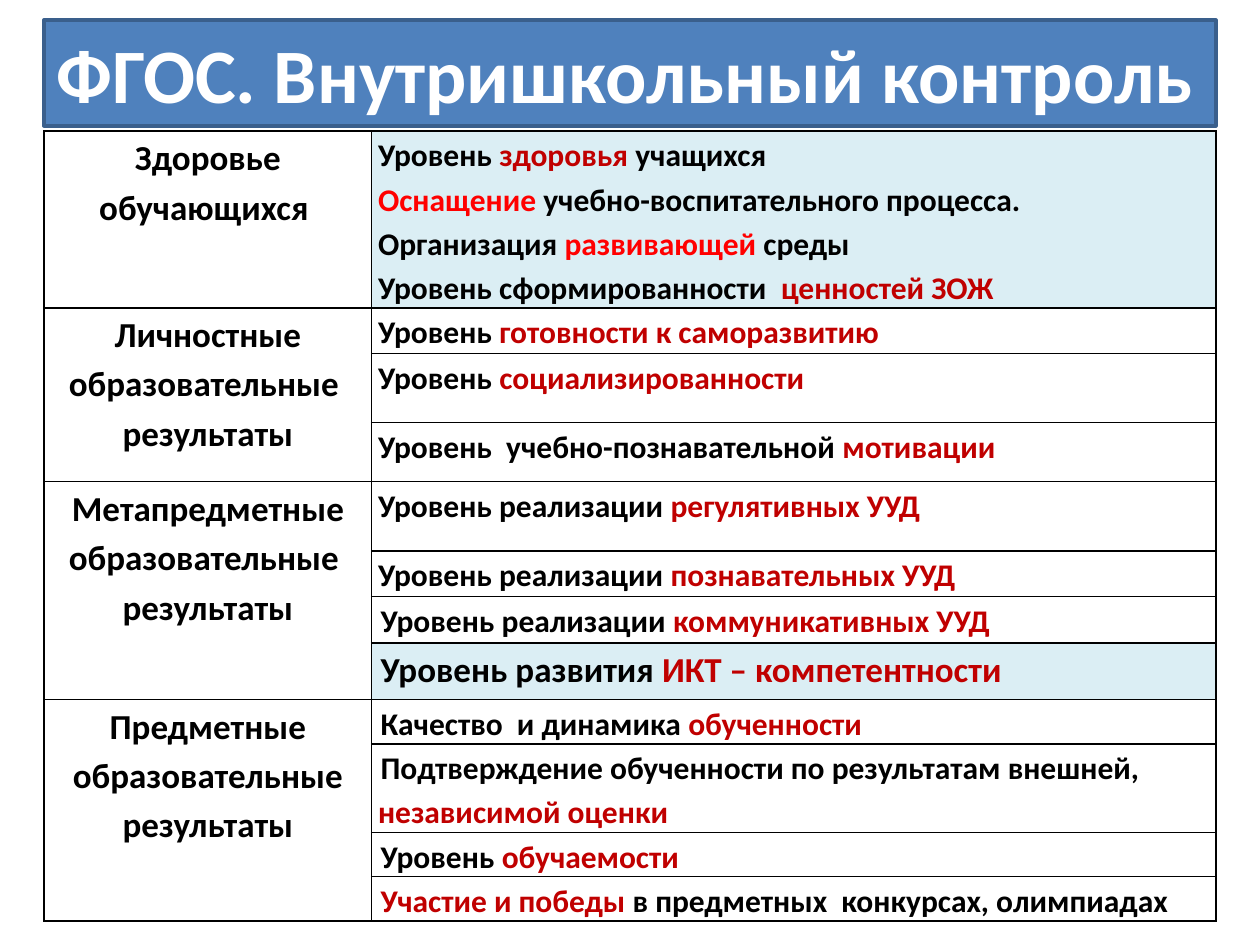
from lxml import etree
from pptx import Presentation
from pptx.dml.color import RGBColor
from pptx.enum.shapes import MSO_SHAPE
from pptx.enum.text import MSO_ANCHOR, MSO_AUTO_SIZE, PP_ALIGN
from pptx.oxml.ns import qn
from pptx.util import Inches, Pt

LEFT, CENTER = PP_ALIGN.LEFT, PP_ALIGN.CENTER
TOP, MIDDLE = MSO_ANCHOR.TOP, MSO_ANCHOR.MIDDLE
RECTANGLE = MSO_SHAPE.RECTANGLE
FIT_SHAPE = MSO_AUTO_SIZE.SHAPE_TO_FIT_TEXT

FONT = "Calibri"
BLACK, WHITE = "000000", "FFFFFF"
DARK_RED, RED = "C00000", "FF0000"
BLUE, BLUE_EDGE, PALE_BLUE = "4F81BD", "3A5F8C", "DBEEF4"

MARGIN, TABLE_TOP = 0.35, 1.04
COLUMN_WIDTHS = (2.6, 6.7)
TABLE_WIDTH = sum(COLUMN_WIDTHS)


def plain(text):
    return text, BLACK


def key(text, color=DARK_RED):
    return text, color


def criterion(height, *lines, **style):
    return height, lines, style


# Each result area with its criteria: row height, lines of runs, style
INDENTED = {"indent": 0.02}
AREAS = [
    (["Здоровье обучающихся "], [
        criterion(1.38,
                  [plain("Уровень "), key("здоровья "), plain("учащихся")],
                  [key("Оснащение", RED), plain(" учебно-воспитательного процесса.")],
                  [plain("Организация "), key("развивающей", RED), plain(" среды")],
                  [plain("Уровень сформированности  "), key("ценностей ЗОЖ")],
                  fill=PALE_BLUE),
    ]),
    (["Личностные образовательные ", "результаты"], [
        criterion(0.36, [plain("Уровень "), key("готовности к саморазвитию")]),
        criterion(0.55, [plain("Уровень "), key("социализированности")]),
        criterion(0.47, [plain("Уровень  учебно-познавательной "), key("мотивации")]),
    ]),
    (["Метапредметные образовательные ", "результаты"], [
        criterion(0.55, [plain("Уровень реализации "), key("регулятивных УУД")]),
        criterion(0.36, [plain("Уровень реализации "), key("познавательных УУД")]),
        criterion(0.37, [plain("Уровень реализации "), key("коммуникативных УУД")],
                  **INDENTED),
        criterion(0.45, [plain("Уровень развития "), key("ИКТ – компетентности")],
                  fill=PALE_BLUE, size=20, **INDENTED),
    ]),
    (["Предметные образовательные результаты"], [
        criterion(0.34, [plain("Качество  и динамика "), key("обученности")],
                  **INDENTED),
        criterion(0.69, [plain("Подтверждение обученности по результатам внешней, "),
                         key("независимой оценки")], **INDENTED),
        criterion(0.34, [plain("Уровень "), key("обучаемости")], **INDENTED),
        criterion(0.34, [key("Участие и победы "),
                         plain("в предметных  конкурсах, олимпиадах")], **INDENTED),
    ]),
]


def rgb(value):
    return RGBColor.from_string(value)


def write_text(frame, lines, size=18, align=LEFT, spacing=None, indent=0):
    """Fill a text frame with paragraphs, each a list of (text, colour) runs."""
    for index, runs in enumerate(lines):
        paragraph = frame.add_paragraph() if index else frame.paragraphs[0]
        paragraph.alignment = align
        if spacing:
            paragraph.line_spacing = spacing
        if indent:
            properties = paragraph._p.get_or_add_pPr()
            properties.set("marL", "0")
            properties.set("indent", str(Inches(indent)))
        for text, color in runs:
            run = paragraph.add_run()
            run.text = text
            run.font.name = FONT
            run.font.size = Pt(size)
            run.font.bold = True
            run.font.color.rgb = rgb(color)


def set_borders(cell, color=BLACK, width=1):
    properties = cell._tc.get_or_add_tcPr()
    for position, side in enumerate(("lnL", "lnR", "lnT", "lnB")):
        border = etree.Element(qn(f"a:{side}"), w=str(Pt(width)))
        fill = etree.SubElement(border, qn("a:solidFill"))
        etree.SubElement(fill, qn("a:srgbClr"), val=color)
        properties.insert(position, border)


def fill_cell(cell, lines, fill=WHITE, **text_format):
    cell.margin_left = cell.margin_right = Inches(0.05)
    cell.margin_top = cell.margin_bottom = 0
    cell.vertical_anchor = TOP
    cell.fill.solid()
    cell.fill.fore_color.rgb = rgb(fill)
    write_text(cell.text_frame, lines, spacing=1.15, **text_format)


def add_title(slide, text):
    banner = slide.shapes.add_shape(RECTANGLE, Inches(MARGIN), Inches(0.16),
                                    Inches(TABLE_WIDTH), Inches(0.84))
    banner.shadow.inherit = False
    banner.fill.solid()
    banner.fill.fore_color.rgb = rgb(BLUE)
    banner.line.color.rgb = rgb(BLUE_EDGE)
    banner.line.width = Pt(2)
    frame = banner.text_frame
    frame.word_wrap = False
    frame.auto_size = FIT_SHAPE
    frame.vertical_anchor = MIDDLE
    write_text(frame, [[(text, WHITE)]], size=44)


def add_control_table(slide):
    heights = [row[0] for _, criteria in AREAS for row in criteria]
    table = slide.shapes.add_table(
        len(heights), len(COLUMN_WIDTHS), Inches(MARGIN), Inches(TABLE_TOP),
        Inches(TABLE_WIDTH), Inches(sum(heights))).table
    table.first_row = table.horz_banding = False
    for column, width in zip(table.columns, COLUMN_WIDTHS):
        column.width = Inches(width)
    for row, height in zip(table.rows, heights):
        row.height = Inches(height)

    first = 0
    for names, criteria in AREAS:
        # Area name, merged over all of its criteria
        area = table.cell(first, 0)
        last = first + len(criteria) - 1
        if last > first:
            area.merge(table.cell(last, 0))
        fill_cell(area, [[plain(name)] for name in names], size=20, align=CENTER)
        # Criteria
        for row, (_, lines, style) in enumerate(criteria, first):
            fill_cell(table.cell(row, 1), lines, **style)
        first = last + 1

    for cell in table.iter_cells():
        set_borders(cell)


def main():
    presentation = Presentation()
    presentation.slide_width = Inches(10)
    presentation.slide_height = Inches(7.5)
    slide = presentation.slides.add_slide(presentation.slide_layouts[6])
    add_control_table(slide)
    add_title(slide, "ФГОС. Внутришкольный контроль")
    presentation.save("out.pptx")


if __name__ == "__main__":
    main()
